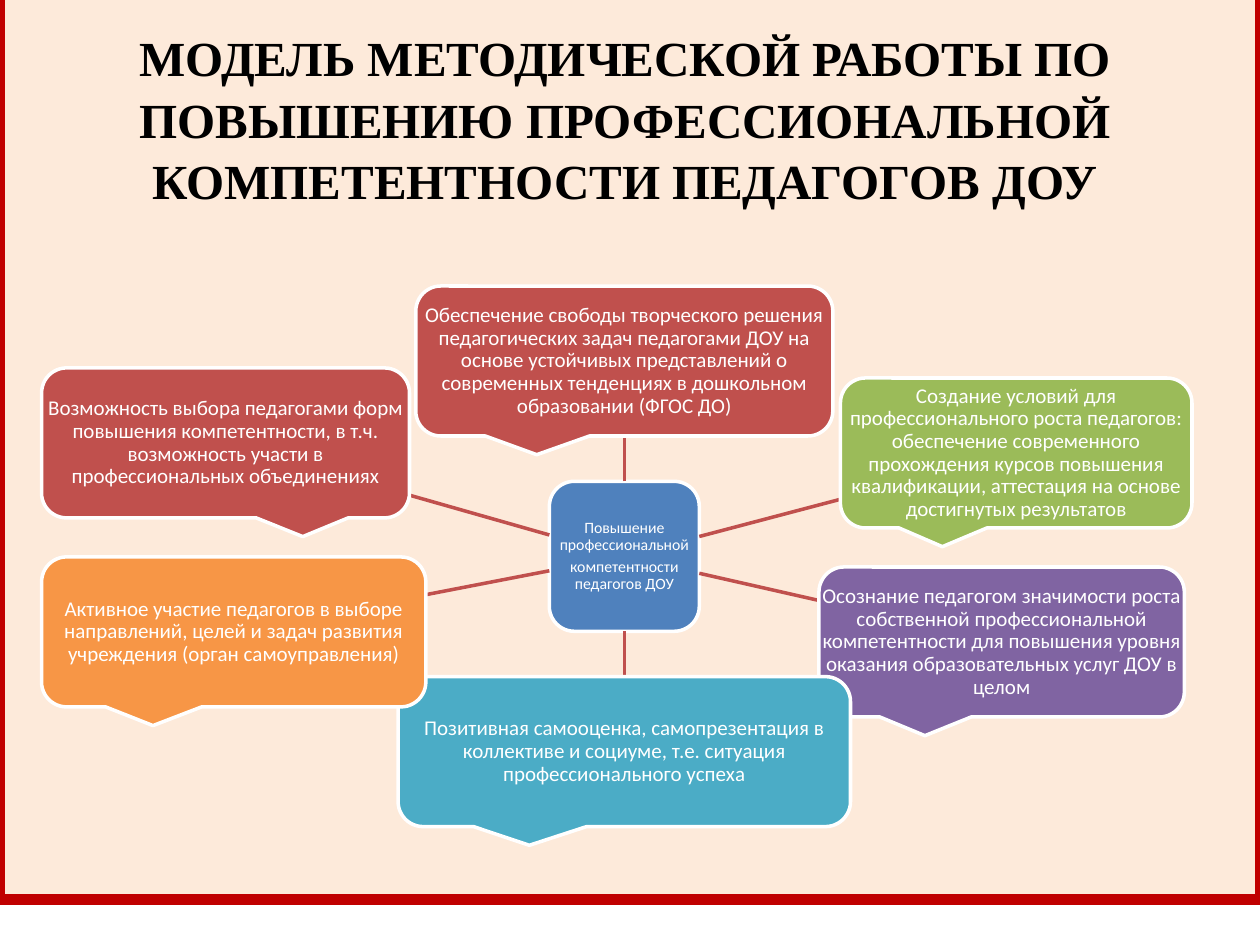
from pptx import Presentation
from pptx.dml.color import RGBColor
from pptx.enum.shapes import MSO_CONNECTOR, MSO_SHAPE
from pptx.enum.text import MSO_ANCHOR, PP_ALIGN
from pptx.oxml.ns import qn
from pptx.util import Inches, Pt
from lxml.etree import SubElement

HUES = {"paper": "FDEADA", "frame": "C00000", "ink": "000000", "white": "FFFFFF",
        "blue": "4F81BD", "red": "C0504D", "green": "9BBB59",
        "violet": "8064A2", "teal": "4BACC6", "orange": "F79646"}
COLS, ROWS, SIDE = 100, 75, 11.9
TITLE = ("МОДЕЛЬ МЕТОДИЧЕСКОЙ РАБОТЫ ПО ПОВЫШЕНИЮ ПРОФЕССИОНАЛЬНОЙ "
         "КОМПЕТЕНТНОСТИ ПЕДАГОГОВ ДОУ")
CORE = ["Повышение профессиональной", "компетентности педагогов ДОУ"]
HUB = (43.6, 38.2, SIDE, SIDE)
TAIL = 0.21
NOTES = [
    (33, 22.7, 33.1, "red", -TAIL,
     "Обеспечение свободы творческого решения педагогических задач педагогами ДОУ "
     "на основе устойчивых представлений о современных тенденциях в дошкольном "
     "образовании (ФГОС ДО)"),
    (66.7, 30, 27.9, "green", -TAIL,
     "Создание условий для профессионального роста педагогов: обеспечение "
     "современного прохождения курсов повышения квалификации, аттестация на основе "
     "достигнутых результатов"),
    (65, 45, 29, "violet", -TAIL,
     "Осознание педагогом значимости роста собственной профессиональной "
     "компетентности для повышения уровня оказания образовательных услуг ДОУ в целом"),
    (31.6, 53.7, 35.9, "teal", -TAIL,
     "Позитивная самооценка, самопрезентация в коллективе и социуме, т.е. ситуация "
     "профессионального успеха"),
    (3.3, 44.2, 30.5, "orange", -TAIL,
     "Активное участие педагогов в выборе направлений, целей и задач развития "
     "учреждения (орган самоуправления)"),
    (3.3, 29.2, 29.2, "red", TAIL,
     "Возможность выбора педагогами форм повышения компетентности, в т.ч. "
     "возможность участи в профессиональных объединениях"),
]

deck = Presentation()
deck.slide_width, deck.slide_height = Inches(10), Inches(7.5)
slide = deck.slides.add_slide(deck.slide_layouts[6])
parts = slide.shapes


def scale(*cells):
    units = (deck.slide_width / COLS, deck.slide_height / ROWS)
    return [round(cell * units[i % 2]) for i, cell in enumerate(cells)]


def paint(name):
    return RGBColor.from_string(HUES[name])


def add_form(kind, area, fill, line, width):
    form = parts.add_shape(kind, *scale(*area))
    form.shadow.inherit = False
    form.fill.solid()
    form.fill.fore_color.rgb = paint(fill)
    form.line.color.rgb = paint(line)
    form.line.width = Pt(width)
    return form


def add_text(area, lines, size, face="Calibri", hue="white", bold=False,
             pad=0.01, foot=0.01, pitch=0.9):
    frame = parts.add_textbox(*scale(*area)).text_frame
    frame.word_wrap = True
    frame.vertical_anchor = MSO_ANCHOR.MIDDLE
    frame.margin_left = frame.margin_right = frame.margin_top = Inches(pad)
    frame.margin_bottom = Inches(foot)
    frame.text = "\n".join(lines)
    for para in frame.paragraphs:
        para.alignment = PP_ALIGN.CENTER
        para.line_spacing = pitch
        font = para.font
        font.name, font.size, font.bold = face, Pt(size), bold
        font.color.rgb = paint(hue)
    for para in frame.paragraphs[:-1]:
        para.space_after = Pt(size * 0.35)


def mid(area):
    left, top, width, height = area
    return left + width / 2, top + height / 2


def edge(area, goal):
    x, y = mid(area)
    run, rise = goal[0] - x, goal[1] - y
    reach = 1 / max(abs(run) * 2 / area[2], abs(rise) * 2 / area[3])
    return x + run * reach, y + rise * reach


def add_spoke(area):
    ends = edge(HUB, mid(area)) + edge(area, mid(HUB))
    spoke = parts.add_connector(MSO_CONNECTOR.STRAIGHT, *scale(*ends))
    spoke.line.color.rgb = paint("red")
    spoke.line.width = Pt(2)
    SubElement(spoke._element.spPr, qn("a:effectLst"))


add_form(MSO_SHAPE.RECTANGLE, (0, -6.7, COLS, 78.1), "paper", "frame", 6)
add_text((3.9, -2.5, 91.4, 30), [TITLE], 28, "Times New Roman", "ink", True,
         pad=0.05, foot=0.69, pitch=1.05)
add_form(MSO_SHAPE.FLOWCHART_ALTERNATE_PROCESS, HUB, "blue", "white", 2)
add_text(HUB, CORE, 9)

for left, top, width, hue, tail, words in NOTES:
    area = (left, top, width, SIDE)
    add_spoke(area)
    note = add_form(MSO_SHAPE.ROUNDED_RECTANGULAR_CALLOUT, area, hue, "white", 2)
    note.adjustments[0] = tail
    add_text(area, [words], 12)

deck.save("out.pptx")
